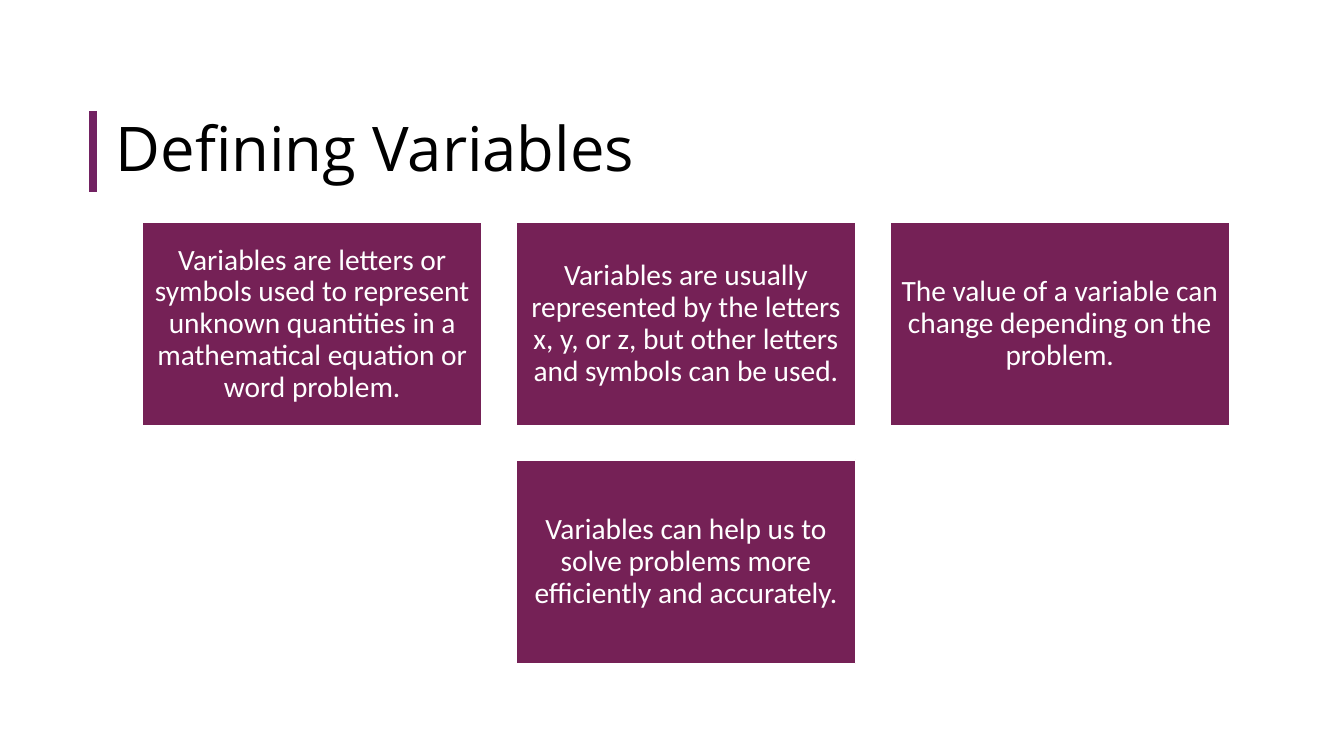
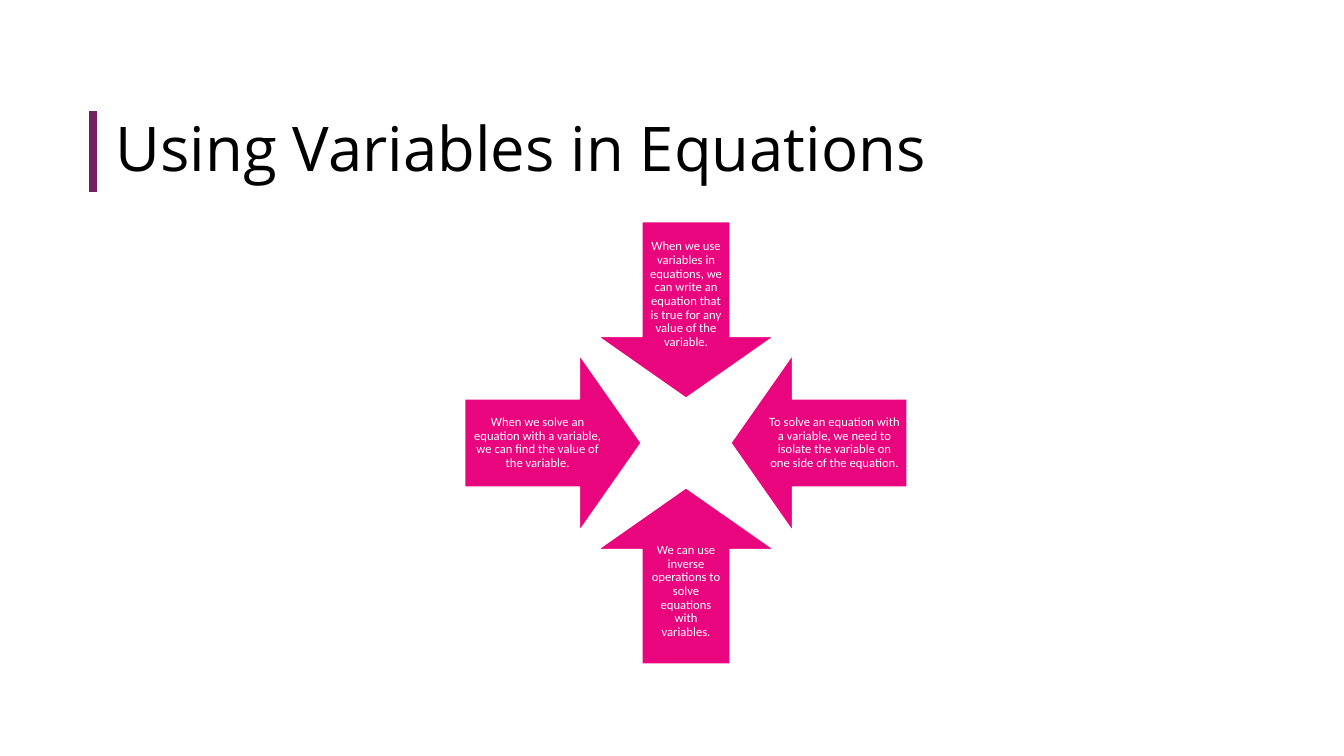
"""Build two slides on variables: a card grid and four converging arrows."""
from lxml import etree
from pptx import Presentation
from pptx.dml.color import RGBColor
from pptx.enum import shapes, text
from pptx.oxml.ns import qn
from pptx.util import Pt

COLORS = {"bar": "722262", "card": "752156", "arrow": "E9057E",
          "title": "000000", "light": "FFFFFF"}
TITLE_FONT, BODY_FONT = "Open Sans", "Calibri"

CARDS_TITLE = "Defining Variables"
CARDS = [
    "Variables are letters or symbols used to represent unknown quantities in a "
    "mathematical equation or word problem.",
    "Variables are usually represented by the letters x, y, or z, but other letters "
    "and symbols can be used.",
    "The value of a variable can change depending on the problem.",
    "Variables can help us to solve problems more efficiently and accurately.",
]

ARROWS_TITLE = "Using Variables in Equations"
ARROWS = [
    (shapes.MSO_SHAPE.DOWN_ARROW, 0, -1,
     "When we use variables in equations, we can write an equation that is true for "
     "any value of the variable."),
    (shapes.MSO_SHAPE.LEFT_ARROW, 1, 0,
     "To solve an equation with a variable, we need to isolate the variable on one "
     "side of the equation."),
    (shapes.MSO_SHAPE.UP_ARROW, 0, 1,
     "We can use inverse operations to solve equations with variables."),
    (shapes.MSO_SHAPE.RIGHT_ARROW, -1, 0,
     "When we solve an equation with a variable, we can find the value of the variable."),
]

CENTER_X, CENTER_Y = 490, 316.4
CARD_WIDTH, CARD_HEIGHT, CARD_GAP, COLUMNS = 242.7, 145.6, 24.3, 3
ARROW_SIZE, ARROW_OFFSET = 126, 95
TITLE_TOP, TITLE_HEIGHT = 79.2, 57.6


def color(name):
    return RGBColor.from_string(COLORS[name])


def write(shape, content, font_name, size, color_name, alignment):
    frame = shape.text_frame
    frame.text = content
    frame.word_wrap = True
    frame.vertical_anchor = text.MSO_ANCHOR.MIDDLE
    paragraph = frame.paragraphs[0]
    paragraph.alignment = alignment
    paragraph.line_spacing = 0.9
    font = paragraph.runs[0].font
    font.name, font.size = font_name, Pt(size)
    font.color.rgb = color(color_name)


def add_titled_slide(presentation, title):
    slide = presentation.slides.add_slide(presentation.slide_layouts[6])
    bar = slide.shapes.add_connector(
        shapes.MSO_CONNECTOR.STRAIGHT, Pt(66.4), Pt(TITLE_TOP),
        Pt(66.4), Pt(TITLE_TOP + TITLE_HEIGHT))
    bar.line.color.rgb = color("bar")
    bar.line.width = Pt(6)
    etree.SubElement(bar._element.spPr, qn("a:effectLst"))
    box = slide.shapes.add_textbox(Pt(75.6), Pt(TITLE_TOP), Pt(828), Pt(TITLE_HEIGHT))
    write(box, title, TITLE_FONT, 44, "title", text.PP_ALIGN.LEFT)
    return slide


def add_block(slide, kind, center_x, center_y, width, height, fill, content, size, inset):
    shape = slide.shapes.add_shape(
        kind, Pt(center_x - width / 2), Pt(center_y - height / 2), Pt(width), Pt(height))
    shape.shadow.inherit = False
    shape.fill.solid()
    shape.fill.fore_color.rgb = color(fill)
    shape.line.color.rgb = color("light")
    shape.line.width = Pt(1)
    frame = shape.text_frame
    frame.margin_left = frame.margin_right = Pt(inset)
    frame.margin_top = frame.margin_bottom = Pt(inset)
    write(shape, content, BODY_FONT, size, "light", text.PP_ALIGN.CENTER)
    return shape


def add_cards(slide):
    rows = [CARDS[start:start + COLUMNS] for start in range(0, len(CARDS), COLUMNS)]
    for row_index, row in enumerate(rows):
        center_y = CENTER_Y + (row_index - (len(rows) - 1) / 2) * (CARD_HEIGHT + CARD_GAP)
        for column, content in enumerate(row):
            center_x = CENTER_X + (column - (len(row) - 1) / 2) * (CARD_WIDTH + CARD_GAP)
            add_block(slide, shapes.MSO_SHAPE.RECTANGLE, center_x, center_y,
                      CARD_WIDTH, CARD_HEIGHT, "card", content, 21, 6.5)


def add_arrows(slide):
    for kind, step_x, step_y, content in ARROWS:
        arrow = add_block(slide, kind, CENTER_X + step_x * ARROW_OFFSET,
                          CENTER_Y + step_y * ARROW_OFFSET, ARROW_SIZE, ARROW_SIZE,
                          "arrow", content, 9, 5)
        arrow.adjustments[0] = 0.5
        arrow.adjustments[1] = 0.35


def main():
    presentation = Presentation()
    presentation.slide_width, presentation.slide_height = Pt(960), Pt(540)
    add_cards(add_titled_slide(presentation, CARDS_TITLE))
    add_arrows(add_titled_slide(presentation, ARROWS_TITLE))
    presentation.save("out.pptx")


if __name__ == "__main__":
    main()
